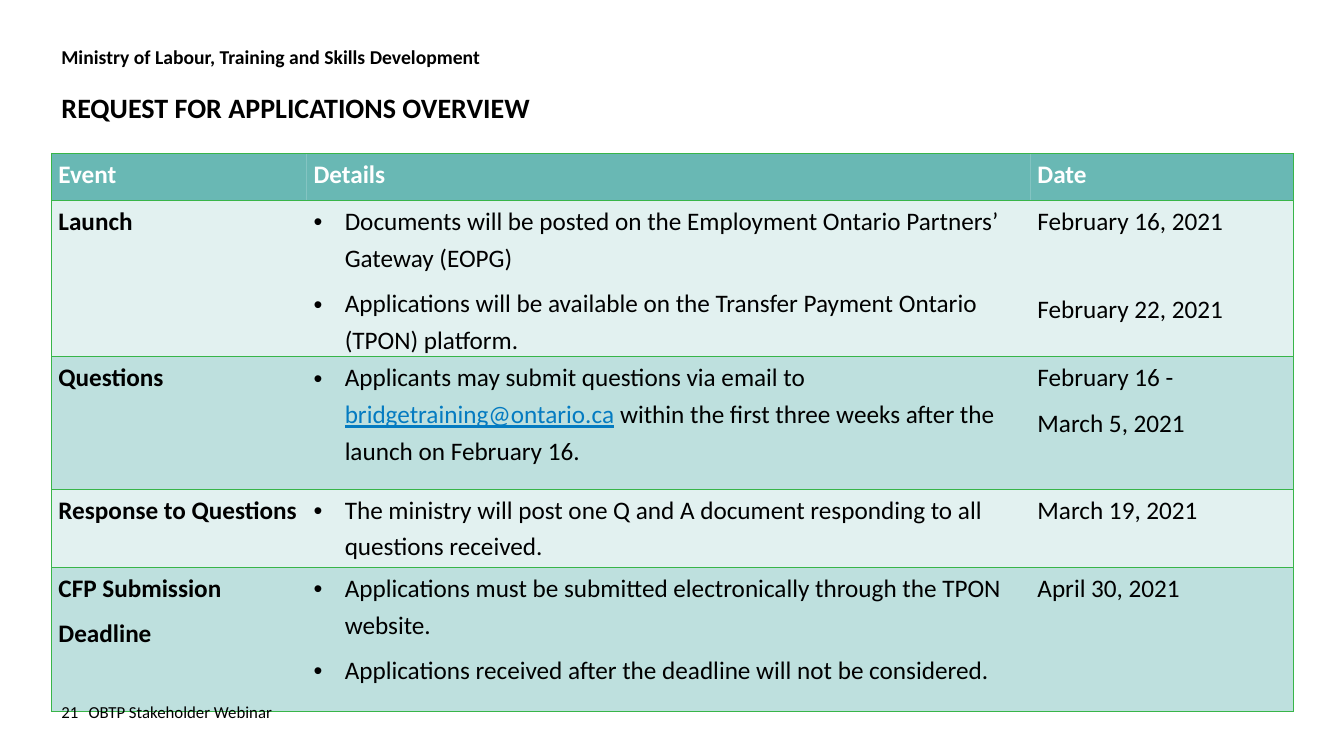
from dataclasses import dataclass

from lxml import etree
from pptx import Presentation
from pptx import util as u
from pptx.dml.color import RGBColor
from pptx.enum import text
from pptx.oxml.ns import qn

PX = 9144  # EMU in one px, 100 px to the inch


@dataclass(frozen=True)
class Theme:
    face: str = "Calibri"
    ink: str = "000000"
    white: str = "FFFFFF"
    head: str = "44A7A2"
    pale: str = "E2F1F0"
    mid: str = "BEE0DE"
    rule: str = "38B549"
    link: str = "047BC1"
    title: int = 20
    body: int = 18
    label: int = 14
    foot: int = 12


T = Theme()
EMAIL = "bridgetraining@ontario.ca"
COLS = (253, 718, 261)
ROWS = (47, 155, 131, 78, 143)
HEAD = ("Event", "Details", "Date")

# Each row: event lines, detail bullets, date lines
EVENTS = (
    (["Launch"],
     ["Documents will be posted on the Employment Ontario Partners’ Gateway (EOPG)",
      "Applications will be available on the Transfer Payment Ontario (TPON) platform."],
     ["February 16, 2021", "February 22, 2021"]),
    (["Questions"],
     [f"Applicants may submit questions via email to {EMAIL} within the first "
      "three weeks after the launch on February 16."],
     ["February 16 -", "March 5, 2021"]),
    (["Response to Questions"],
     ["The ministry will post one Q and A document responding to all questions received."],
     ["March 19, 2021"]),
    (["CFP Submission", "Deadline"],
     ["Applications must be submitted electronically through the TPON website.",
      "Applications received after the deadline will not be considered."],
     ["April 30, 2021"]),
)


def px(n):
    return u.Emu(n * PX)


def style(para, size, color=T.ink, bold=False):
    font = para.font
    font.name, font.size, font.bold = T.face, u.Pt(size), bold
    font.color.rgb = RGBColor.from_string(color)


def label(slide, box, words, size, bold=False, anchor=text.MSO_ANCHOR.TOP):
    frame = slide.shapes.add_textbox(*map(px, box)).text_frame
    frame.word_wrap = True
    frame.vertical_anchor = anchor
    frame.text = words
    style(frame.paragraphs[0], size, bold=bold)


def heading(slide, box, words):
    shape = slide.shapes.title
    shape.left, shape.top, shape.width, shape.height = map(px, box)
    frame = shape.text_frame
    frame.text = words
    frame.word_wrap = True
    frame.auto_size = text.MSO_AUTO_SIZE.NONE
    frame.vertical_anchor = text.MSO_ANCHOR.TOP
    para = frame.paragraphs[0]
    para.alignment = text.PP_ALIGN.LEFT
    para.line_spacing = 0.9
    style(para, T.title, bold=True)


def bullet(para):
    props = para._p.get_or_add_pPr()
    props.set("marL", str(px(31)))
    props.set("indent", str(-px(31)))
    etree.SubElement(props, qn("a:buFont"), typeface="Arial")
    etree.SubElement(props, qn("a:buChar"), char="•")


def border(cell, sides):
    """Rule the named sides and clear the others."""
    props = cell._tc.get_or_add_tcPr()
    for side in "LRTB":
        line = etree.SubElement(props, qn(f"a:ln{side}"), w=str(u.Pt(0.5)))
        if side in sides:
            fill = etree.SubElement(line, qn("a:solidFill"))
            etree.SubElement(fill, qn("a:srgbClr"), val=T.rule)
        else:
            etree.SubElement(line, qn("a:noFill"))


def shade(cell, color, alpha=None):
    cell.fill.solid()
    cell.fill.fore_color.rgb = RGBColor.from_string(color)
    if alpha:
        tint = cell._tc.tcPr.find(f"{qn('a:solidFill')}/{qn('a:srgbClr')}")
        etree.SubElement(tint, qn("a:alpha"), val=str(alpha * 1000))


def write(para, words):
    """Add the words, with the address shown as a link."""
    front, mail, back = words.partition(EMAIL)
    for part in filter(None, (front, mail, back)):
        run = para.add_run()
        run.text = part
        if part == EMAIL:
            run.font.underline = True
            run.font.color.rgb = RGBColor.from_string(T.link)


def fill_cell(cell, lines, color=T.ink, bold=False, dots=False):
    cell.margin_left = cell.margin_right = px(7)
    cell.margin_top = cell.margin_bottom = 0
    frame = cell.text_frame
    for i, words in enumerate(lines):
        para = frame.add_paragraph() if i else frame.paragraphs[0]
        para.line_spacing = 1.2
        para.space_after = u.Pt(6)
        if dots:
            bullet(para)
        style(para, T.body, color, bold)
        write(para, words)


def schedule(slide):
    rows = [[[word] for word in HEAD], *EVENTS]
    grid = slide.shapes.add_table(len(ROWS), len(COLS), px(51), px(152),
                                  px(sum(COLS)), px(sum(ROWS))).table
    grid.horz_banding = False
    for col, width in zip(grid.columns, COLS):
        col.width = px(width)
    for row, height in zip(grid.rows, ROWS):
        row.height = px(height)
    for r, row in enumerate(rows):
        for c, lines in enumerate(row):
            cell = grid.cell(r, c)
            border(cell, "TB" + ("L", "", "R")[c])
            if r == 0:
                shade(cell, T.head, alpha=80)
                fill_cell(cell, lines, T.white, bold=True)
            else:
                shade(cell, T.pale if r % 2 else T.mid)
                fill_cell(cell, lines, bold=c == 0, dots=c == 1)
    # Bring the second launch date level with its bullet
    grid.cell(1, 2).text_frame.paragraphs[1].space_before = u.Pt(30)


def main():
    deck = Presentation()
    deck.slide_width, deck.slide_height = px(1333), px(750)
    slide = deck.slides.add_slide(deck.slide_layouts[5])

    # Header
    label(slide, (51, 40, 973, 34),
          "Ministry of Labour, Training and Skills Development", T.label, bold=True)
    heading(slide, (51, 89, 1079, 54), "REQUEST FOR APPLICATIONS OVERVIEW")

    # Table of dates
    schedule(slide)

    # Footer
    middle = text.MSO_ANCHOR.MIDDLE
    label(slide, (51, 686, 75, 40), "21", T.foot, anchor=middle)
    label(slide, (78, 686, 406, 40), "OBTP Stakeholder Webinar", T.foot, anchor=middle)

    deck.save("out.pptx")


if __name__ == "__main__":
    main()
